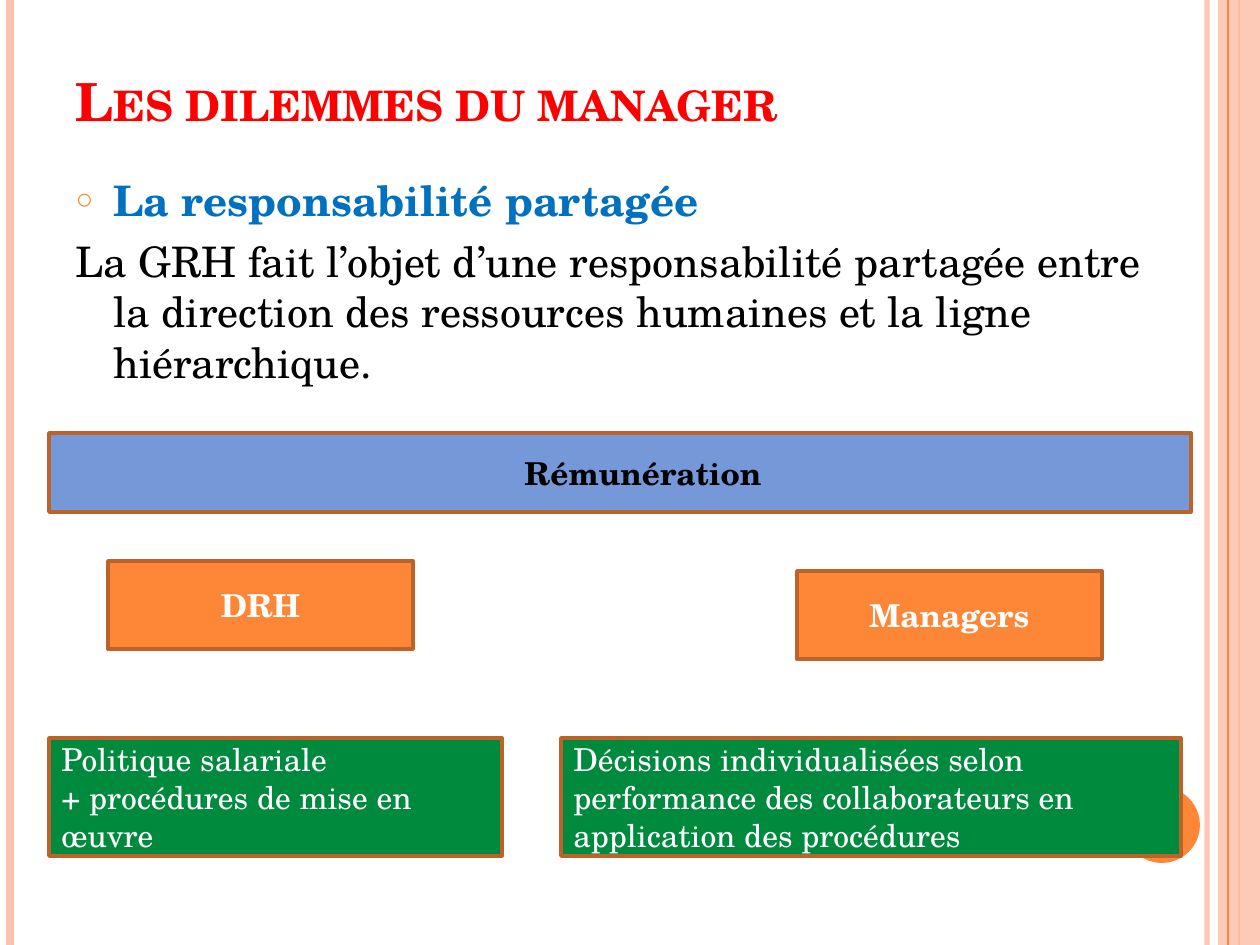
from lxml.etree import SubElement
from pptx import Presentation
from pptx.dml.color import RGBColor
from pptx.enum.shapes import MSO_CONNECTOR, MSO_SHAPE
from pptx.enum.text import MSO_ANCHOR, MSO_AUTO_SIZE, PP_ALIGN
from pptx.oxml.ns import qn
from pptx.util import Pt

EMU_PER_PX = 914400 / 126
SLIDE_WIDTH, SLIDE_HEIGHT = 1260, 945
FONT = "TeX Gyre Schola"
ORANGE, PEACH, BROWN = "FE8637", "FEC3AE", "BC6329"
BLUE, GREEN, WHITE, BLACK = "7598D9", "008A3E", "FFFFFF", "000000"


def px(length):
    """Turn pixels into EMU."""
    return round(length * EMU_PER_PX)


def paint(fill, color, opacity=100):
    """Give a fill one solid colour with an opacity in percent."""
    fill.solid()
    fill.fore_color.rgb = RGBColor.from_string(color)
    if opacity < 100:
        for node in fill._xPr.iter(qn("a:srgbClr")):
            SubElement(node, qn("a:alpha"), val=str(opacity * 1000))


def style(paragraph, size, color, bold=False):
    """Set the font of a whole paragraph."""
    font = paragraph.font
    font.name, font.size, font.bold = FONT, Pt(size), bold
    font.color.rgb = RGBColor.from_string(color)


def place(shape, left, top, width, height):
    """Move and size a shape."""
    shape.left, shape.top = px(left), px(top)
    shape.width, shape.height = px(width), px(height)


def add_rule(slide, x, color, width, opacity=100):
    """Draw a vertical line over the full slide height."""
    rule = slide.shapes.add_connector(
        MSO_CONNECTOR.STRAIGHT, px(x), 0, px(x), px(SLIDE_HEIGHT))
    rule.line.width = Pt(width)
    paint(rule.line.fill, color, opacity)
    SubElement(rule._element.spPr, qn("a:effectLst"))


def add_plain(slide, kind, box, color, opacity=100):
    """Add a filled shape without outline or shadow."""
    shape = slide.shapes.add_shape(kind, *map(px, box))
    shape.shadow.inherit = False
    shape.line.fill.background()
    paint(shape.fill, color, opacity)
    return shape


def add_box(slide, box, color, lines=(), bold=False, align=PP_ALIGN.LEFT):
    """Add an outlined rectangle with lines of white text."""
    shape = add_plain(slide, MSO_SHAPE.RECTANGLE, box, color)
    paint(shape.line.fill, BROWN)
    shape.line.width = Pt(2)
    frame = shape.text_frame
    frame.vertical_anchor = MSO_ANCHOR.MIDDLE
    frame.text = "\n".join(lines)
    for paragraph in frame.paragraphs:
        paragraph.alignment = align
        style(paragraph, 18, WHITE, bold)


def add_label(slide, box, text):
    """Add a centred bold label on one line."""
    frame = slide.shapes.add_textbox(*map(px, box)).text_frame
    frame.word_wrap = False
    paragraph = frame.paragraphs[0]
    paragraph.text = text
    paragraph.alignment = PP_ALIGN.CENTER
    style(paragraph, 18, BLACK, True)


def add_decoration(slide):
    """Draw the lines, the band and the disc of the template."""
    add_rule(slide, 1207, PEACH, 3, 93)
    add_rule(slide, 10, PEACH, 4.5)
    add_rule(slide, 1239, ORANGE, 1.5)
    add_plain(slide, MSO_SHAPE.RECTANGLE,
              (1218, 0, SLIDE_WIDTH - 1218, SLIDE_HEIGHT), PEACH, 87)
    add_rule(slide, 1228, ORANGE, 0.75)
    add_plain(slide, MSO_SHAPE.OVAL, (1124, 787, 76, 76), ORANGE)


def fill_title(title, text):
    """Write the title in small capitals."""
    place(title, 63, 38, 1029, 100)
    frame = title.text_frame
    frame.auto_size = MSO_AUTO_SIZE.NONE
    frame.vertical_anchor = MSO_ANCHOR.BOTTOM
    frame.text = text
    paragraph = frame.paragraphs[0]
    paragraph.alignment = PP_ALIGN.LEFT
    style(paragraph, 30, "FF0000", True)
    paragraph._p.pPr.find(qn("a:defRPr")).set("cap", "small")


def set_bullet(paragraph, character=None):
    """Set a hanging indent and an optional orange bullet."""
    properties = paragraph._p.get_or_add_pPr()
    properties.set("marL", str(px(38)))
    properties.set("indent", str(px(-38)))
    if character is None:
        SubElement(properties, qn("a:buNone"))
        return
    color = SubElement(properties, qn("a:buClr"))
    SubElement(color, qn("a:srgbClr"), val=ORANGE)
    SubElement(properties, qn("a:buSzPct"), val="70000")
    SubElement(properties, qn("a:buChar"), char=character)


def fill_body(body, heading, text):
    """Write the bulleted heading and its paragraph."""
    place(body, 63, 168, 1119, 725)
    frame = body.text_frame
    frame.auto_size = MSO_AUTO_SIZE.NONE
    frame.text = f"{heading}\n{text}"
    first, second = frame.paragraphs
    set_bullet(first, "○")
    set_bullet(second)
    style(first, 24, "0070C0", True)
    style(second, 24, BLACK)
    for paragraph in frame.paragraphs:
        paragraph.space_before = Pt(6)


def main():
    """Build and save the slide."""
    presentation = Presentation()
    presentation.slide_width = px(SLIDE_WIDTH)
    presentation.slide_height = px(SLIDE_HEIGHT)
    slide = presentation.slides.add_slide(presentation.slide_layouts[1])
    add_decoration(slide)
    fill_title(slide.shapes.title, "Les dilemmes du manager")
    fill_body(slide.placeholders[1], "La responsabilité partagée",
              "La GRH fait l’objet d’une responsabilité partagée entre la "
              "direction des ressources humaines et la ligne hiérarchique.")
    add_box(slide, (49, 433, 1142, 79), BLUE)
    for left, top, role in ((108, 561, "DRH"), (797, 571, "Managers")):
        add_box(slide, (left, top, 305, 88), ORANGE, [role], True,
                PP_ALIGN.CENTER)
    add_box(slide, (49, 738, 453, 118), GREEN,
            ["Politique salariale", "+ procédures de mise en œuvre"])
    add_box(slide, (561, 738, 620, 118), GREEN,
            ["Décisions individualisées selon performance des "
             "collaborateurs en application des procédures"])
    add_label(slide, (511, 448, 264, 50), "Rémunération")
    presentation.save("out.pptx")


if __name__ == "__main__":
    main()
